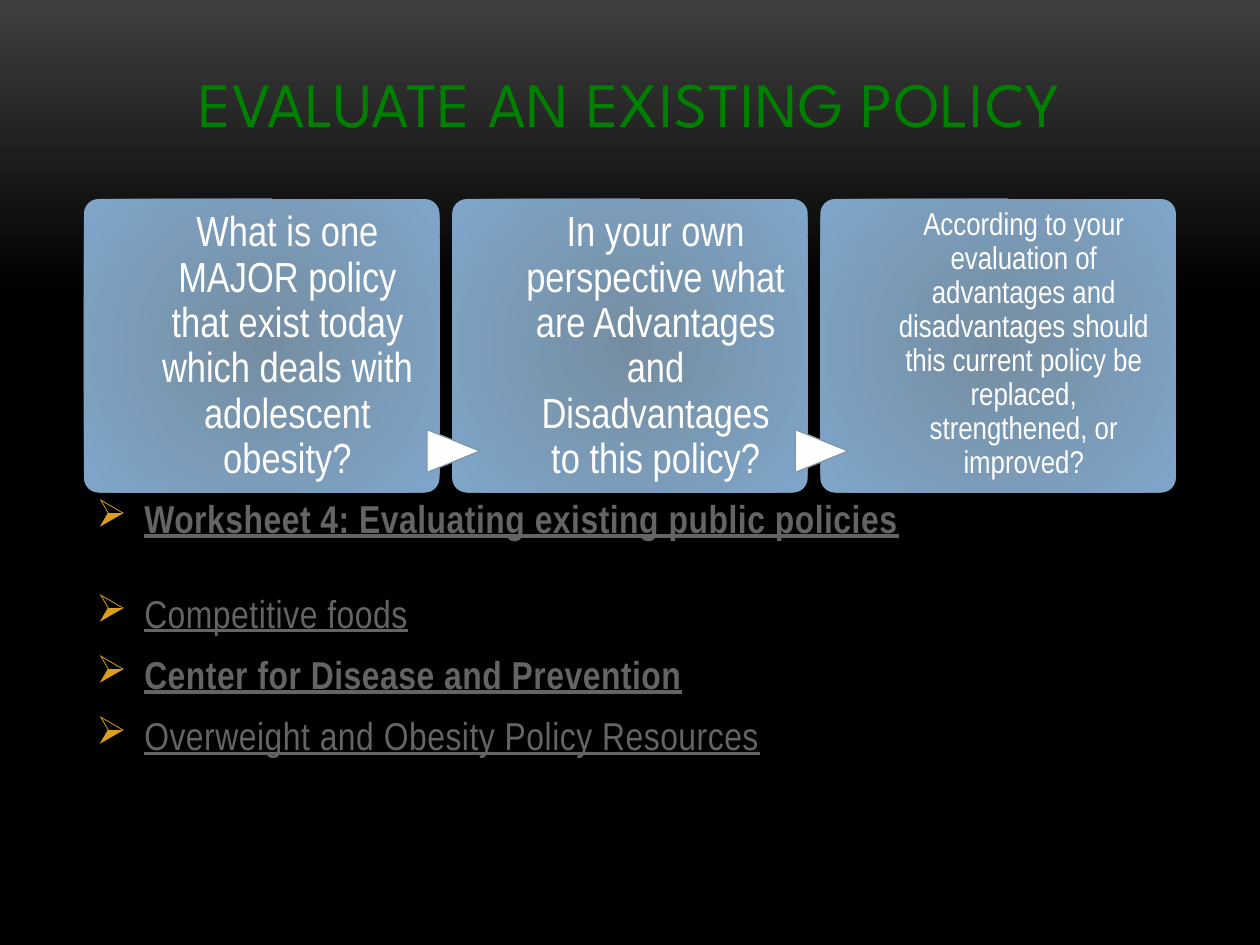
from lxml import etree
from pptx import Presentation
from pptx.dml.color import RGBColor
from pptx.enum.shapes import MSO_SHAPE
from pptx.enum.text import MSO_ANCHOR, PP_ALIGN
from pptx.oxml import parse_xml
from pptx.oxml.ns import nsdecls, qn
from pptx.util import Inches, Pt

CARD, ARROW = MSO_SHAPE.ROUNDED_RECTANGLE, MSO_SHAPE.FLOWCHART_EXTRACT
CENTER, BOTTOM = PP_ALIGN.CENTER, MSO_ANCHOR.BOTTOM
BODY_FONT, TITLE_FONT = "Arial Narrow", "League Spartan"


def rgb(value):
    return RGBColor.from_string(value)


def add_run(paragraph, text, color, spacing=0, **formats):
    run = paragraph.add_run()
    run.text = text
    for name, value in formats.items():
        setattr(run.font, name, value)
    run.font.color.rgb = rgb(color)
    if spacing:
        run._r.get_or_add_rPr().set("spc", str(spacing))


prs = Presentation()
prs.slide_width, prs.slide_height = Inches(10), Inches(7.5)
slide = prs.slides.add_slide(prs.slide_layouts[6])
shapes = slide.shapes

# Background fading from grey to black
backdrop = slide.background.fill
backdrop.gradient()
backdrop.gradient_angle = 270
for stop, color, position in zip(backdrop.gradient_stops, ("3F3F3F", "000000"), (0, 0.31)):
    stop.color.rgb, stop.position = rgb(color), position

# Grid: three columns between equal margins
margin = prs.slide_width / 15
content_width = prs.slide_width - 2 * margin
gap = Inches(0.1)
card_width = (content_width - 2 * gap) / 3
card_top, card_height = Inches(1.58), Inches(2.33)
arrow_width, arrow_height = Inches(0.34), Inches(0.42)

# Title
title = shapes.add_textbox(margin, Inches(0.33), content_width, Inches(0.83)).text_frame
title.word_wrap, title.vertical_anchor = True, BOTTOM
title.paragraphs[0].alignment = CENTER
add_run(title.paragraphs[0], "EVALUATE AN EXISTING POLICY", "008000", 50,
        size=Pt(36), name=TITLE_FONT)

# Question cards, with an arrow leading into each one after the first
questions = [
    ("What is one MAJOR policy that exist today which deals with adolescent obesity?", 24, 0.09),
    ("In your own perspective what are Advantages and Disadvantages to this policy?", 24, 0.09),
    ("According to your evaluation of advantages and disadvantages should this current "
     "policy be replaced, strengthened, or improved?", 18, 0.07),
]
for column, (question, size, inset) in enumerate(questions):
    left = margin + column * (card_width + gap)
    card = shapes.add_shape(CARD, left, card_top, card_width, card_height)
    card.adjustments[0] = 0.05
    card.shadow.inherit = False
    card.line.fill.background()
    card.fill.gradient()
    for stop, color, position in zip(card.fill.gradient_stops, ("758DA1", "7FA6CA"), (0, 1)):
        stop.color.rgb, stop.position = rgb(color), position
    linear = card._element.spPr.find(qn("a:gradFill")).find(qn("a:lin"))
    linear.getparent().replace(linear, parse_xml(
        f'<a:path {nsdecls("a")} path="circle">'
        '<a:fillToRect l="100000" t="100000" r="100000" b="100000"/></a:path>'))

    if column:
        arrow = shapes.add_shape(ARROW, left - Inches(0.16), Inches(3.37),
                                 arrow_width, arrow_height)
        arrow.rotation = 90
        arrow.shadow.inherit = False
        arrow.fill.solid()
        arrow.fill.fore_color.rgb = rgb("FFFFFF")
        arrow.line.color.rgb, arrow.line.width = rgb("7E97AD"), Pt(0.75)

    label = shapes.add_textbox(left + card_width * 0.2, card_top,
                               Inches(2.1), card_height).text_frame
    label.word_wrap = True
    label.margin_left = label.margin_right = label.margin_bottom = 0
    label.margin_top = Inches(inset)
    label.paragraphs[0].alignment, label.paragraphs[0].line_spacing = CENTER, 0.9
    add_run(label.paragraphs[0], question, "FFFFFF", size=Pt(size), name=BODY_FONT)

# Resource list: text, bold, space before
resources = [
    ("Worksheet 4: Evaluating existing public policies", True, 0),
    ("Competitive foods", False, 24),
    ("Center for Disease and Prevention", True, 5),
    ("Overweight and Obesity Policy Resources", False, 5),
]
listing = shapes.add_textbox(margin, Inches(3.92), content_width, card_height).text_frame
listing.word_wrap = True
for row, (resource, bold, before) in enumerate(resources):
    item = listing.add_paragraph() if row else listing.paragraphs[0]
    item.line_spacing, item.space_before, item.space_after = 0.9, Pt(before), Pt(6)
    properties = item._p.get_or_add_pPr()
    properties.set("marL", str(Inches(0.38)))
    properties.set("indent", str(-Inches(0.38)))
    bullet_color = etree.SubElement(properties, qn("a:buClr"))
    etree.SubElement(bullet_color, qn("a:srgbClr"), val="DC9E1F")
    etree.SubElement(properties, qn("a:buChar"), char="➢")
    add_run(item, resource, "646464", 30, size=Pt(22.2), name=BODY_FONT,
            bold=bold, underline=True)

prs.save("out.pptx")
